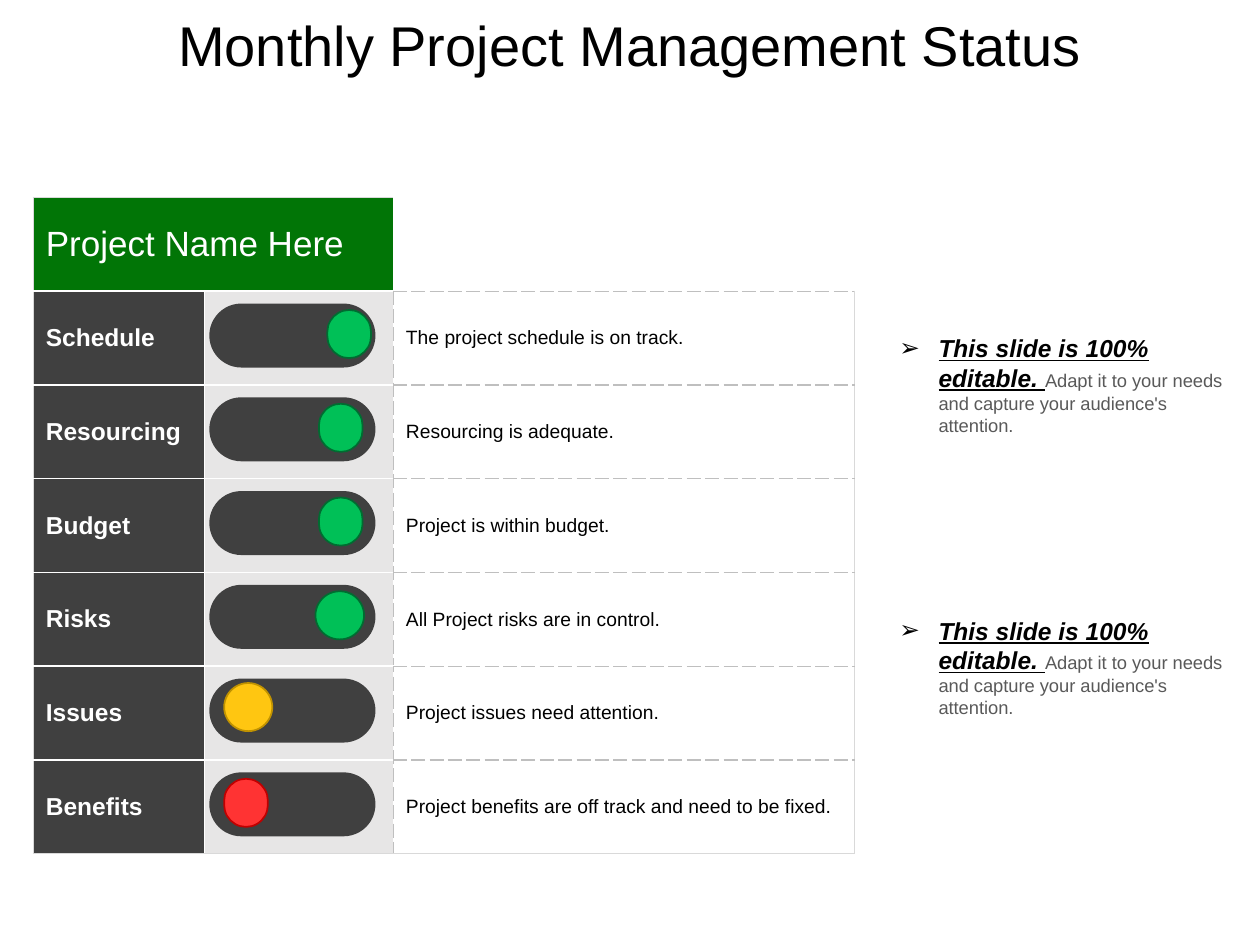
from lxml import etree
from pptx import Presentation
from pptx.dml.color import RGBColor
from pptx.enum.shapes import MSO_SHAPE
from pptx.enum.text import MSO_ANCHOR, PP_ALIGN
from pptx.oxml.ns import qn
from pptx.util import Cm, Pt

PILL = MSO_SHAPE.ROUNDED_RECTANGLE
MIDDLE = MSO_ANCHOR.MIDDLE
CENTER = PP_ALIGN.CENTER

FONT = "Arial"
COLORS = {
    "black": "000000", "white": "FFFFFF", "header": "017506",
    "dark": "404040", "light": "E7E6E6", "note": "595959",
    "frame": "D9D9D9", "dash": "BFBFBF",
}
# Status: knob fill and outline
STATUS = {
    "green": ("00C057", "006C31"),
    "amber": ("FFC611", "C09200"),
    "red": ("FF3333", "C00000"),
}
# Border: colour, width in points, dash
WHITE_EDGE = ("white", 1, "solid")
FRAME_EDGE = ("frame", 0.75, "solid")
DASH_EDGE = ("dash", 0.75, "sysDash")

# Area, comment, status, knob left and width in cm
AREAS = [
    ("Schedule", "The project schedule is on track.", "green", 6.6, 0.88),
    ("Resourcing", "Resourcing is adequate.", "green", 6.43, 0.88),
    ("Budget", "Project is within budget.", "green", 6.43, 0.88),
    ("Risks", "All Project risks are in control.", "green", 6.36, 0.98),
    ("Issues", "Project issues need attention.", "amber", 4.52, 0.97),
    ("Benefits", "Project benefits are off track and need to be fixed.",
     "red", 4.52, 0.88),
]
TABLE_LEFT, TABLE_TOP, ROW_HEIGHT = 0.67, 3.98, 1.89
COLUMN_WIDTHS = (3.45, 3.81, 9.3)
SWITCH_LEFT, SWITCH_TOP, SWITCH_WIDTH, SWITCH_HEIGHT = 4.22, 6.12, 3.35, 1.29
KNOB_HEIGHT = 0.97
NOTE_TOPS = (6.58, 12.27)


def rgb(value):
    return RGBColor.from_string(value)


def add_run(paragraph, text, size, color, bold=False, italic=False, underline=False):
    run = paragraph.add_run()
    run.text = text
    font = run.font
    font.name, font.size = FONT, Pt(size)
    font.bold, font.italic, font.underline = bold, italic, underline
    font.color.rgb = rgb(COLORS[color])


def add_edges(cell, left, right, top, bottom):
    properties = cell._tc.get_or_add_tcPr()
    edges = zip(("lnL", "lnR", "lnT", "lnB"), (left, right, top, bottom))
    for tag, (color, width, dash) in edges:
        line = etree.SubElement(properties, qn(f"a:{tag}"), w=str(Pt(width)))
        fill = etree.SubElement(line, qn("a:solidFill"))
        etree.SubElement(fill, qn("a:srgbClr"), val=COLORS[color])
        etree.SubElement(line, qn("a:prstDash"), val=dash)


def style_cell(cell, fill, edges, text="", size=11, color="black", bold=False):
    add_edges(cell, *edges)
    cell.fill.solid()
    cell.fill.fore_color.rgb = rgb(COLORS[fill])
    cell.vertical_anchor = MIDDLE
    if text:
        add_run(cell.text_frame.paragraphs[0], text, size, color, bold)


def add_status_table(slide):
    row_count = len(AREAS) + 1
    table = slide.shapes.add_table(
        row_count, len(COLUMN_WIDTHS), Cm(TABLE_LEFT), Cm(TABLE_TOP),
        Cm(sum(COLUMN_WIDTHS)), Cm(ROW_HEIGHT * row_count)).table
    table.first_row = table.horz_banding = False
    for column, width in zip(table.columns, COLUMN_WIDTHS):
        column.width = Cm(width)
    for row in table.rows:
        row.height = Cm(ROW_HEIGHT)

    # Header row
    table.cell(0, 0).merge(table.cell(0, 1))
    header_edges = (FRAME_EDGE, WHITE_EDGE, FRAME_EDGE, WHITE_EDGE)
    style_cell(table.cell(0, 0), "header", header_edges,
               "Project Name Here", 20, "white")
    style_cell(table.cell(0, 1), "header", header_edges)
    style_cell(table.cell(0, 2), "white", (WHITE_EDGE,) * 3 + (DASH_EDGE,))

    # One row for each area
    for index, (area, comment, *_) in enumerate(AREAS, start=1):
        last = index == len(AREAS)
        solid_bottom = FRAME_EDGE if last else WHITE_EDGE
        dashed_bottom = FRAME_EDGE if last else DASH_EDGE
        style_cell(table.cell(index, 0), "dark",
                   (FRAME_EDGE, WHITE_EDGE, WHITE_EDGE, solid_bottom),
                   area, 14, "white", True)
        style_cell(table.cell(index, 1), "light",
                   (WHITE_EDGE, DASH_EDGE, WHITE_EDGE, solid_bottom))
        style_cell(table.cell(index, 2), "white",
                   (DASH_EDGE, FRAME_EDGE, DASH_EDGE, dashed_bottom), comment)


def add_pill(shapes, left, top, width, height, fill, outline=None):
    pill = shapes.add_shape(PILL, Cm(left), Cm(top), Cm(width), Cm(height))
    pill.adjustments[0] = 0.5
    pill.shadow.inherit = False
    pill.fill.solid()
    pill.fill.fore_color.rgb = rgb(fill)
    if outline:
        pill.line.color.rgb = rgb(outline)
        pill.line.width = Pt(1)
    else:
        pill.line.fill.background()


def add_switches(slide):
    switches = slide.shapes.add_group_shape().shapes
    for index, (_, _, status, knob_left, knob_width) in enumerate(AREAS):
        top = SWITCH_TOP + index * ROW_HEIGHT
        add_pill(switches, SWITCH_LEFT, top, SWITCH_WIDTH, SWITCH_HEIGHT,
                 COLORS["dark"])
        knob_top = top + (0.09 if status == "amber" else 0.13)
        add_pill(switches, knob_left, knob_top, knob_width, KNOB_HEIGHT,
                 *STATUS[status])


def add_text_box(shapes, left, top, width, height):
    frame = shapes.add_textbox(Cm(left), Cm(top), Cm(width), Cm(height)).text_frame
    frame.word_wrap = True
    frame.vertical_anchor = MIDDLE
    return frame.paragraphs[0]


def add_notes(slide):
    notes = slide.shapes.add_group_shape().shapes
    for top in NOTE_TOPS:
        note = add_text_box(notes, 17.88, top, 7.09, 2.36)
        properties = note._p.get_or_add_pPr()
        properties.set("marL", str(Cm(0.79)))
        properties.set("indent", str(-Cm(0.79)))
        etree.SubElement(properties, qn("a:buFont"), typeface=FONT)
        etree.SubElement(properties, qn("a:buChar"), char="➢")
        add_run(note, "This slide is 100% editable. ", 14, "black",
                True, True, True)
        add_run(note, "Adapt it to your needs and capture your audience's attention.",
                10.5, "note")


def add_title(slide):
    title = add_text_box(slide.shapes, 0, 0.08, 25.4, 1.62)
    title.alignment = CENTER
    add_run(title, "Monthly Project Management Status", 32, "black")


def main():
    presentation = Presentation()
    presentation.slide_width, presentation.slide_height = Cm(25.4), Cm(19.05)
    slide = presentation.slides.add_slide(presentation.slide_layouts[6])
    add_status_table(slide)
    add_switches(slide)
    add_notes(slide)
    add_title(slide)
    presentation.save("out.pptx")


if __name__ == "__main__":
    main()
